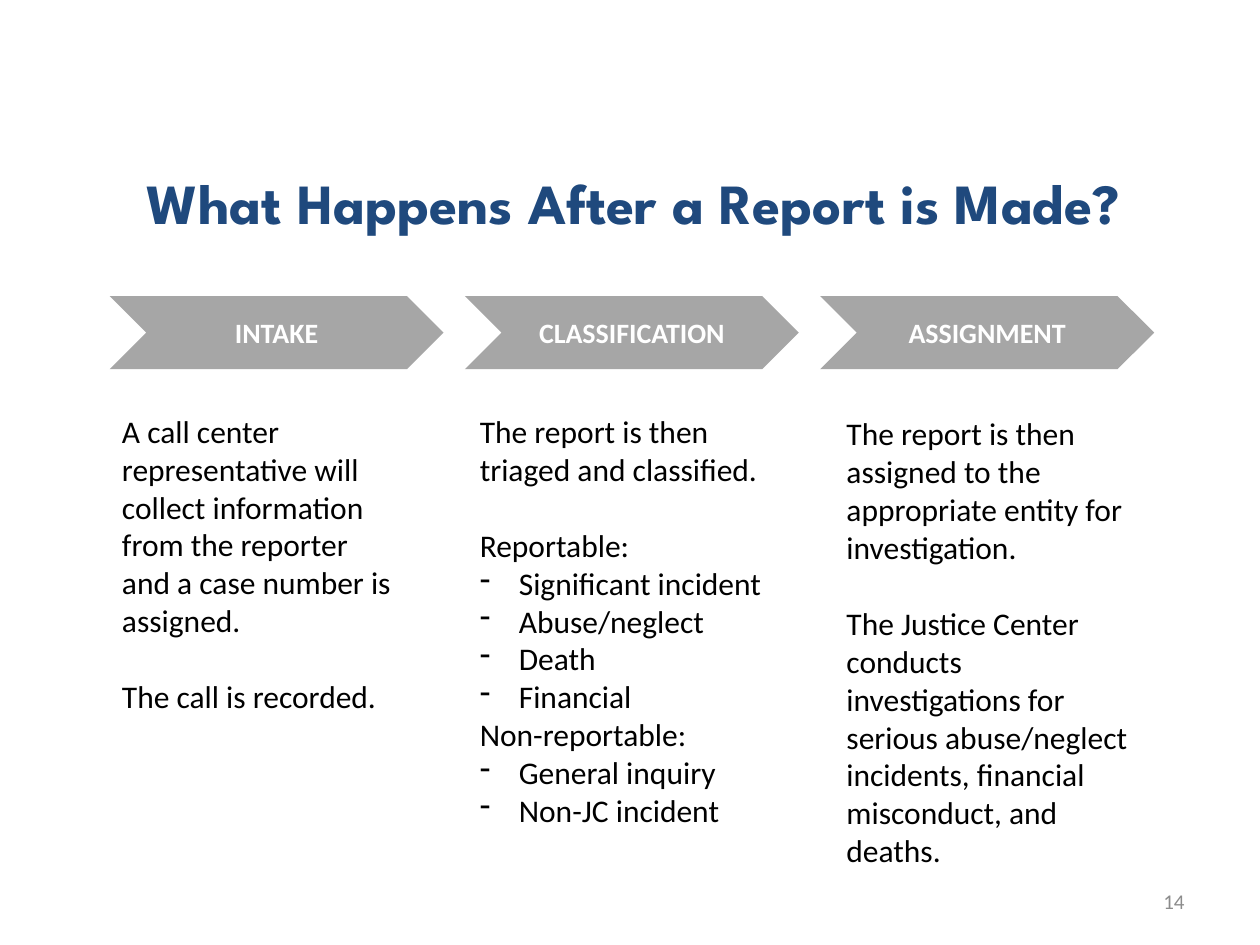
import pptx
import pptx.util
import pptx.dml.color
import pptx.enum.shapes
import pptx.enum.text
from lxml import etree

Inches, Pt = pptx.util.Inches, pptx.util.Pt
RGBColor = pptx.dml.color.RGBColor
ALIGN = pptx.enum.text.PP_ALIGN
ANCHOR = pptx.enum.text.MSO_ANCHOR

NAVY = RGBColor(0x1F, 0x49, 0x7D)
GRAY = RGBColor(0xA6, 0xA6, 0xA6)
PAGE_GRAY = RGBColor(0x8C, 0x8C, 0x8C)
WHITE = RGBColor(0xFF, 0xFF, 0xFF)
BLACK = RGBColor(0, 0, 0)


def style(paragraph, size, color, bold=False, name="Calibri", align=ALIGN.LEFT):
    paragraph.alignment = align
    font = paragraph.font
    font.name, font.size, font.bold = name, Pt(size), bold
    font.color.rgb = color


def add_box(left, top, width, height, anchor):
    box = slide.shapes.add_textbox(Inches(left), Inches(top), Inches(width), Inches(height))
    box.text_frame.word_wrap = True
    box.text_frame.vertical_anchor = anchor
    return box.text_frame


presentation = pptx.Presentation()
presentation.slide_width, presentation.slide_height = Inches(10), Inches(7.5)
slide = presentation.slides.add_slide(presentation.slide_layouts[6])

# Title
title = add_box(0.31, 1.05, 9.44, 1.1, ANCHOR.MIDDLE).paragraphs[0]
title.text = "What Happens After a Report is Made?"
style(title, 32.4, NAVY, True, "League Spartan", ALIGN.CENTER)

# Page number
page_number = add_box(7.17, 6.95, 2.33, 0.4, ANCHOR.MIDDLE).paragraphs[0]
page_number.text = "14"
style(page_number, 12, PAGE_GRAY, align=ALIGN.RIGHT)

# Process steps: heading, description box, lines as (kind, text)
steps = [
    ("INTAKE", (0.87, 3.22, 2.36, 2.52), [
        ("plain", "A call center representative will collect information "
                  "from the reporter and a case number is assigned."),
        ("spaced", "The call is recorded."),
    ]),
    ("CLASSIFICATION", (3.71, 3.22, 2.54, 3.43), [
        ("plain", "The report is then triaged and classified."),
        ("spaced", "Reportable:"),
        ("dash", "Significant incident"),
        ("dash", "Abuse/neglect"),
        ("dash", "Death"),
        ("dash", "Financial"),
        ("plain", "Non-reportable:"),
        ("dash", "General inquiry"),
        ("dash", "Non-JC incident"),
    ]),
    ("ASSIGNMENT", (6.62, 3.24, 2.54, 3.74), [
        ("plain", "The report is then assigned to the appropriate entity for investigation."),
        ("spaced", "The Justice Center conducts investigations for serious "
                   "abuse/neglect incidents, financial misconduct, and deaths."),
    ]),
]

for index, (heading, area, lines) in enumerate(steps):
    # Chevron
    chevron = slide.shapes.add_shape(
        pptx.enum.shapes.MSO_SHAPE.CHEVRON,
        Inches(0.87 + 2.82 * index), Inches(2.35), Inches(2.65), Inches(0.58))
    chevron.shadow.inherit = False
    chevron.fill.solid()
    chevron.fill.fore_color.rgb = GRAY
    chevron.line.fill.background()
    chevron.text_frame.vertical_anchor = ANCHOR.MIDDLE
    label = chevron.text_frame.paragraphs[0]
    label.text = heading
    style(label, 16, WHITE, True, align=ALIGN.CENTER)

    # Description
    description = add_box(*area, ANCHOR.TOP)
    description.auto_size = pptx.enum.text.MSO_AUTO_SIZE.SHAPE_TO_FIT_TEXT
    for position, (kind, text) in enumerate(lines):
        line = description.add_paragraph() if position else description.paragraphs[0]
        line.text = text
        if kind == "spaced":
            line.space_before = Pt(22)
        elif kind == "dash":
            properties = line._p.get_or_add_pPr()
            properties.set("marL", str(Inches(0.31)))
            properties.set("indent", str(-Inches(0.31)))
            etree.SubElement(properties, pptx.oxml.ns.qn("a:buChar"), char="-")
        style(line, 18, BLACK)

presentation.save("out.pptx")
